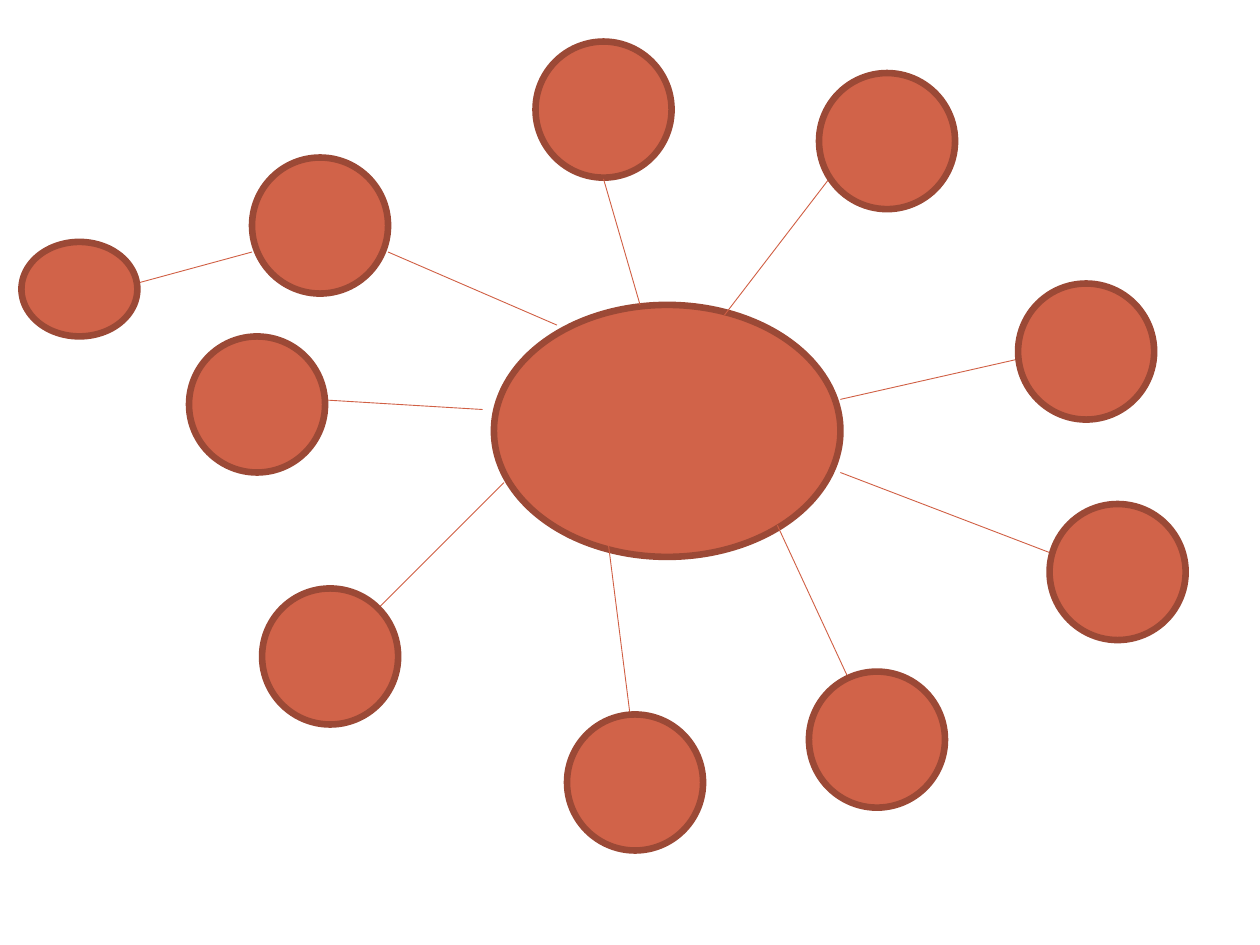
from lxml.etree import SubElement
from pptx import Presentation
from pptx.dml.color import RGBColor
from pptx.enum.shapes import MSO_CONNECTOR, MSO_SHAPE
from pptx.oxml.ns import qn
from pptx.util import Inches, Pt

COLORS = {"fill": "D16349", "edge": "9B4936", "spoke": "D05F44"}
NODE = 1.08
HUB = (3.92, 2.42, 2.75, 2)
LEAF = (0.17, 1.92, 0.92, 0.75)
SPOKES = [
    ((4.42, 2.58), (3.08, 2)),
    ((3.83, 3.25), (2.5, 3.17)),
    ((4, 3.83), (3, 4.83)),
    ((5.75, 2.5), (6.58, 1.42)),
    ((6.67, 3.17), (8.17, 2.83)),
    ((4.83, 4.33), (5, 5.67)),
    ((6.17, 4.17), (6.75, 5.42)),
    ((6.67, 3.75), (8.42, 4.42)),
]
NODES = [
    (2, 1.25), (1.5, 2.67), (2.08, 4.67),
    (4.5, 5.67), (4.25, 0.33), (6.5, 0.58),
    (8.08, 2.25), (8.33, 4), (6.42, 5.33),
]
LINKS = [((5.08, 2.42), (4.79, 1.42)), ((2, 2), (1.08, 2.25))]


class Web:
    """Draws the ovals and spokes of a mind map on one slide."""

    def __init__(self, slide):
        self.shapes = slide.shapes

    def stroke(self, line, color, width):
        line.color.rgb = RGBColor.from_string(COLORS[color])
        line.width = Pt(width)

    def oval(self, *box):
        shape = self.shapes.add_shape(MSO_SHAPE.OVAL, *map(Inches, box))
        shape.shadow.inherit = False
        shape.fill.solid()
        shape.fill.fore_color.rgb = RGBColor.from_string(COLORS["fill"])
        self.stroke(shape.line, "edge", 3.78)

    def spoke(self, start, end):
        line = self.shapes.add_connector(
            MSO_CONNECTOR.STRAIGHT, *map(Inches, start + end))
        self.stroke(line.line, "spoke", 0.5)
        SubElement(line._element.spPr, qn("a:effectLst"))


def main():
    deck = Presentation()
    deck.slide_width, deck.slide_height = Inches(10), Inches(7.5)
    web = Web(deck.slides.add_slide(deck.slide_layouts[6]))
    web.oval(*HUB)
    for ends in SPOKES:
        web.spoke(*ends)
    for left, top in NODES:
        web.oval(left, top, NODE, NODE)
    for ends in LINKS:
        web.spoke(*ends)
    web.oval(*LEAF)
    deck.save("out.pptx")


if __name__ == "__main__":
    main()
